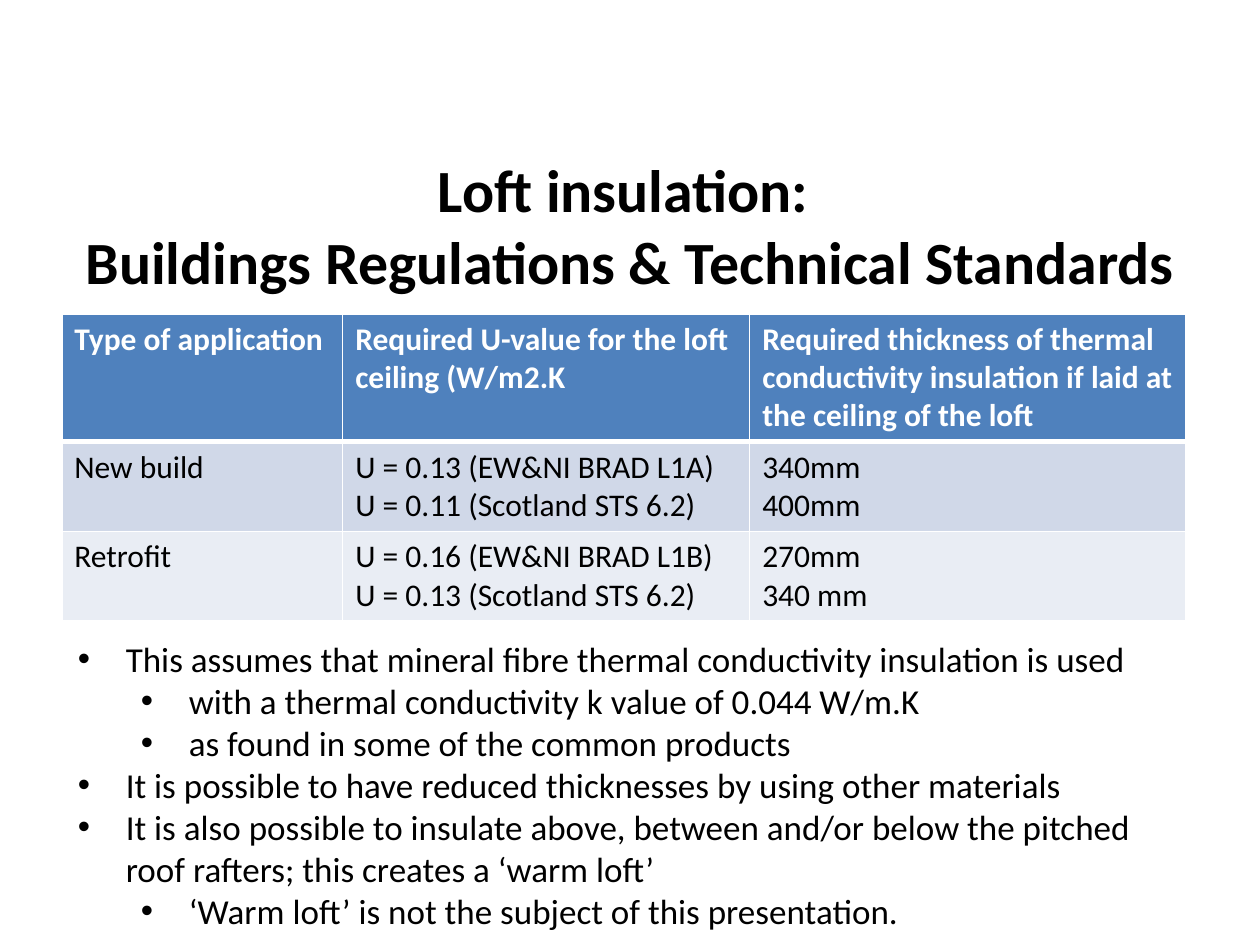
"""Build the loft insulation regulations slide."""
import pptx
import pptx.dml.color
import pptx.enum.text
import pptx.oxml
import pptx.oxml.ns
import pptx.util
from lxml import etree

Inches, Pt = pptx.util.Inches, pptx.util.Pt
RGBColor = pptx.dml.color.RGBColor
qn = pptx.oxml.ns.qn

FONT = "Calibri"
BLACK = RGBColor(0x00, 0x00, 0x00)
WHITE = RGBColor(0xFF, 0xFF, 0xFF)
BLUE = RGBColor(0x4F, 0x81, 0xBD)
BAND_DARK = RGBColor(0xD0, 0xD8, 0xE8)
BAND_LIGHT = RGBColor(0xE9, 0xED, 0xF4)

TITLE = ["Loft insulation: ", "Buildings Regulations & Technical Standards"]
COLUMN_WIDTHS = [2.23, 3.23, 3.46]
ROW_HEIGHT = 0.68
ROW_FILLS = [BLUE, BAND_DARK, BAND_LIGHT]
ROWS = [
    [["Type of application"],
     ["Required U-value for the loft ceiling (W/m2.K"],
     ["Required thickness of thermal conductivity insulation if laid at the ceiling of the loft"]],
    [["New build"],
     ["U = 0.13 (EW&NI BRAD L1A)", "U = 0.11 (Scotland STS 6.2)"],
     ["340mm", "400mm"]],
    [["Retrofit"],
     ["U = 0.16 (EW&NI BRAD L1B)", "U = 0.13 (Scotland STS 6.2)"],
     ["270mm", "340 mm"]],
]
BULLETS = [
    (0, "This assumes that mineral fibre thermal conductivity insulation is used"),
    (1, "with a thermal conductivity k value of 0.044 W/m.K"),
    (1, "as found in some of the common products"),
    (0, "It is possible to have reduced thicknesses by using other materials"),
    (0, "It is also possible to insulate above, between and/or below the pitched "
        "roof rafters; this creates a ‘warm loft’"),
    (1, "‘Warm loft’ is not the subject of this presentation."),
]


def add_run(p, text, size, color=BLACK, bold=False):
    r = p.add_run()
    r.text = text
    r.font.name, r.font.size, r.font.bold = FONT, Pt(size), bold
    r.font.color.rgb = color


def paragraph(tf, index):
    return tf.add_paragraph() if index else tf.paragraphs[0]


def add_text_box(s, left, top, width, height):
    tf = s.shapes.add_textbox(Inches(left), Inches(top), Inches(width), Inches(height)).text_frame
    tf.word_wrap = True
    return tf


def set_borders(cell, bottom, top):
    tc_pr = cell._tc.get_or_add_tcPr()
    for side, width in (("L", 1), ("R", 1), ("T", top), ("B", bottom)):
        ln = etree.SubElement(tc_pr, qn(f"a:ln{side}"), w=str(Pt(width)))
        fill = etree.SubElement(ln, qn("a:solidFill"))
        etree.SubElement(fill, qn("a:srgbClr"), val=str(WHITE))


def add_table(s):
    table = s.shapes.add_table(
        len(ROWS), len(COLUMN_WIDTHS), Inches(0.49), Inches(2.49),
        Inches(sum(COLUMN_WIDTHS)), Inches(ROW_HEIGHT * len(ROWS))).table
    for column, width in zip(table.columns, COLUMN_WIDTHS):
        column.width = Inches(width)
    for i, (row, fill) in enumerate(zip(ROWS, ROW_FILLS)):
        header = i == 0
        table.rows[i].height = Inches(ROW_HEIGHT)
        for j, lines in enumerate(row):
            cell = table.cell(i, j)
            set_borders(cell, bottom=3 if header else 1, top=3 if i == 1 else 1)
            cell.fill.solid()
            cell.fill.fore_color.rgb = fill
            for k, line in enumerate(lines):
                add_run(paragraph(cell.text_frame, k), line, 18, WHITE if header else BLACK, header)


def add_bullets(s):
    tf = add_text_box(s, 0.52, 5.01, 8.89, 2.93)
    for i, (level, text) in enumerate(BULLETS):
        p = paragraph(tf, i)
        p.level = level
        p_pr = p._p.get_or_add_pPr()
        p_pr.set("marL", str(Inches(0.38 + 0.5 * level)))
        p_pr.set("indent", str(Inches(-0.38)))
        etree.SubElement(p_pr, qn("a:buFont"), typeface="Arial")
        etree.SubElement(p_pr, qn("a:buChar"), char="•")
        add_run(p, text, 20)


def add_title(s):
    tf = add_text_box(s, 0.5, 1.16, 9, 1.25)
    tf.vertical_anchor = pptx.enum.text.MSO_ANCHOR.MIDDLE
    p = tf.paragraphs[0]
    p.alignment = pptx.enum.text.PP_ALIGN.CENTER
    for i, line in enumerate(TITLE):
        if i:
            p.add_line_break()
        add_run(p, line, 34.2, bold=True)


def main():
    prs = pptx.Presentation()
    prs.slide_width, prs.slide_height = Inches(10), Inches(7.5)
    s = prs.slides.add_slide(prs.slide_layouts[6])
    add_table(s)
    add_bullets(s)
    add_title(s)
    prs.save("out.pptx")


if __name__ == "__main__":
    main()
